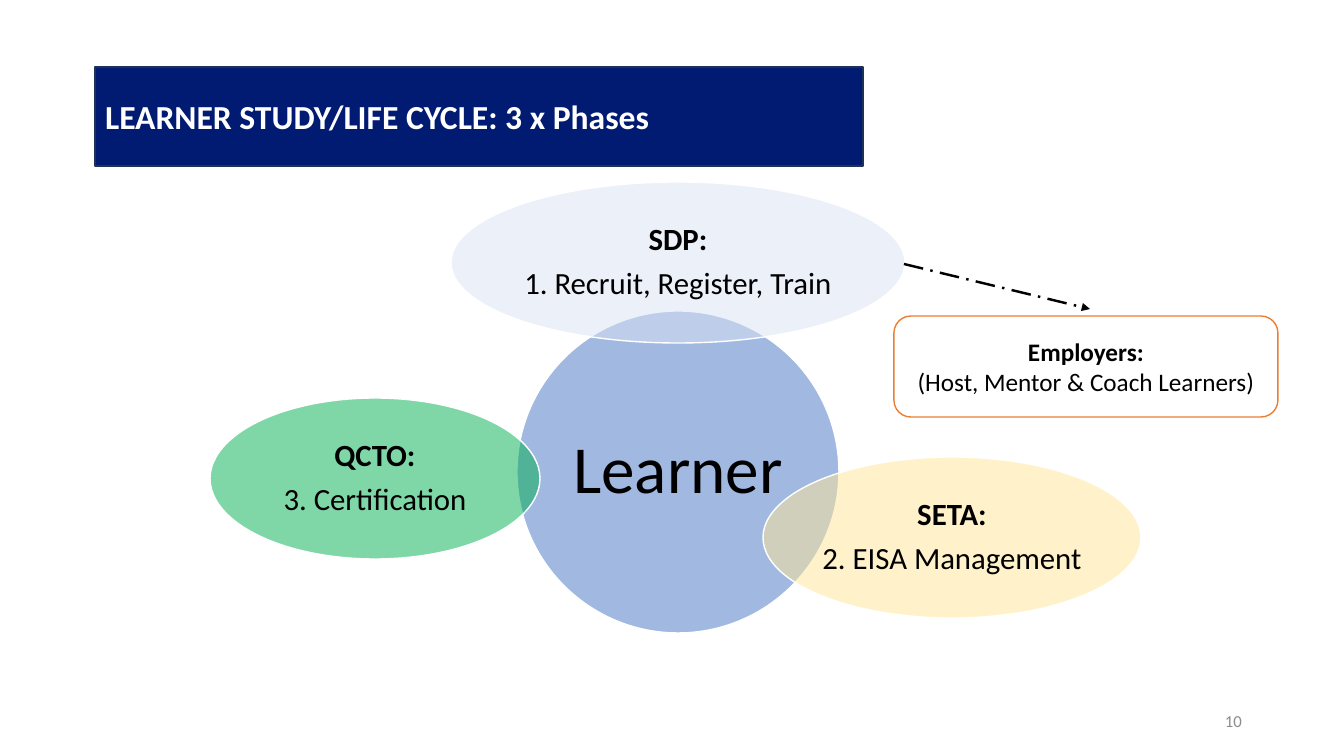
from lxml import etree
from pptx import Presentation, util as u
from pptx.dml.color import RGBColor
from pptx.enum import dml, shapes, text
from pptx.oxml import ns

# Content: places are left, top, width, height in px
SLIDE_SIZE = (1344, 756)
COLOURS = {
    "navy": "001B71", "navy edge": "1E3256", "white": "FFFFFF", "black": "000000",
    "blue": "4472C4", "pale blue": "DAE3F3", "yellow": "FFE699", "green": "00B050",
    "orange": "ED7D31", "grey": "8C8C8C",
}
TITLE = ("LEARNER STUDY/LIFE CYCLE: 3 x Phases", (95, 67, 768, 99))
CYCLE = [  # lines, place, colour, text size, inset
    (["Learner"], (517, 311, 322, 322), "blue", 48, 7),
    (["SDP:", "1. Recruit, Register, Train"], (451, 182, 454, 161), "pale blue", 22, 3),
    (["SETA:", "2. EISA Management"], (763, 457, 378, 161), "yellow", 22, 3),
    (["QCTO:", "3. Certification"], (210, 398, 330, 161), "green", 22, 3),
]
EMPLOYERS = (["Employers:", "(Host, Mentor & Coach Learners)"], (894, 316, 384, 101))
ARROW = (904, 264, 1090, 309)
PAGE_NUMBER = ("10", (950, 701, 302, 40))


def px(length):
    return u.Emu(round(length * 914400 / 100.8))


def colour(name):
    return RGBColor.from_string(COLOURS[name])


def write(shape, lines, size, ink="black", align=text.PP_ALIGN.CENTER, bold_first=False,
          spacing=1.0, after=0, inset=None):
    frame = shape.text_frame
    frame.word_wrap = True
    frame.auto_size = text.MSO_AUTO_SIZE.NONE
    frame.vertical_anchor = text.MSO_ANCHOR.MIDDLE
    if inset is not None:
        frame.margin_left = frame.margin_right = px(inset)
        frame.margin_top = frame.margin_bottom = px(inset)
    frame.text = "\n".join(lines)
    for index, paragraph in enumerate(frame.paragraphs):
        paragraph.alignment = align
        paragraph.line_spacing = spacing
        paragraph.space_before = u.Pt(0)
        paragraph.space_after = u.Pt(after)
        font = paragraph.runs[0].font
        font.name, font.size = "Calibri", u.Pt(size)
        font.bold = bold_first and index == 0
        font.color.rgb = colour(ink)


def paint(shape, fill, line, opacity=100):
    shape.fill.solid()
    shape.fill.fore_color.rgb = colour(fill)
    shape.line.color.rgb = colour(line)
    shape.line.width = u.Pt(1)
    shape.shadow.inherit = False
    if opacity < 100:
        ink = shape.fill._xPr.find(ns.qn("a:solidFill"))[0]
        etree.SubElement(ink, ns.qn("a:alpha"), val=str(opacity * 1000))


def main():
    deck = Presentation()
    deck.slide_width, deck.slide_height = map(px, SLIDE_SIZE)
    slide = deck.slides.add_slide(deck.slide_layouts[5])

    # Title banner
    heading, place = TITLE
    banner = slide.shapes.title
    banner.left, banner.top, banner.width, banner.height = map(px, place)
    outline = etree.SubElement(banner._element.spPr, ns.qn("a:prstGeom"), prst="roundRect")
    etree.SubElement(outline, ns.qn("a:avLst"))
    paint(banner, "navy", "navy edge")
    write(banner, [heading], 24, "white", text.PP_ALIGN.LEFT, bold_first=True)

    # Learner and the three phases
    for lines, place, fill, size, inset in CYCLE:
        phase = slide.shapes.add_shape(shapes.MSO_SHAPE.OVAL, *map(px, place))
        paint(phase, fill, "white", opacity=50)
        write(phase, lines, size, bold_first=len(lines) > 1, spacing=0.9,
              after=round(size * 0.35, 1), inset=inset)

    # Employers
    lines, place = EMPLOYERS
    employers = slide.shapes.add_shape(shapes.MSO_SHAPE.ROUNDED_RECTANGLE, *map(px, place))
    paint(employers, "white", "orange")
    write(employers, lines, 18, bold_first=True)

    # Arrow from the first phase to the employers
    arrow = slide.shapes.add_connector(shapes.MSO_CONNECTOR.STRAIGHT, *map(px, ARROW))
    arrow.line.color.rgb = colour("black")
    arrow.line.width = u.Pt(1.75)
    arrow.line.dash_style = dml.MSO_LINE.LONG_DASH_DOT
    etree.SubElement(arrow.line._get_or_add_ln(), ns.qn("a:tailEnd"), type="triangle")
    etree.SubElement(arrow._element.spPr, ns.qn("a:effectLst"))

    # Page number
    number, place = PAGE_NUMBER
    page = slide.shapes.add_textbox(*map(px, place))
    write(page, [number], 12, "grey", text.PP_ALIGN.RIGHT)

    deck.save("out.pptx")


if __name__ == "__main__":
    main()
